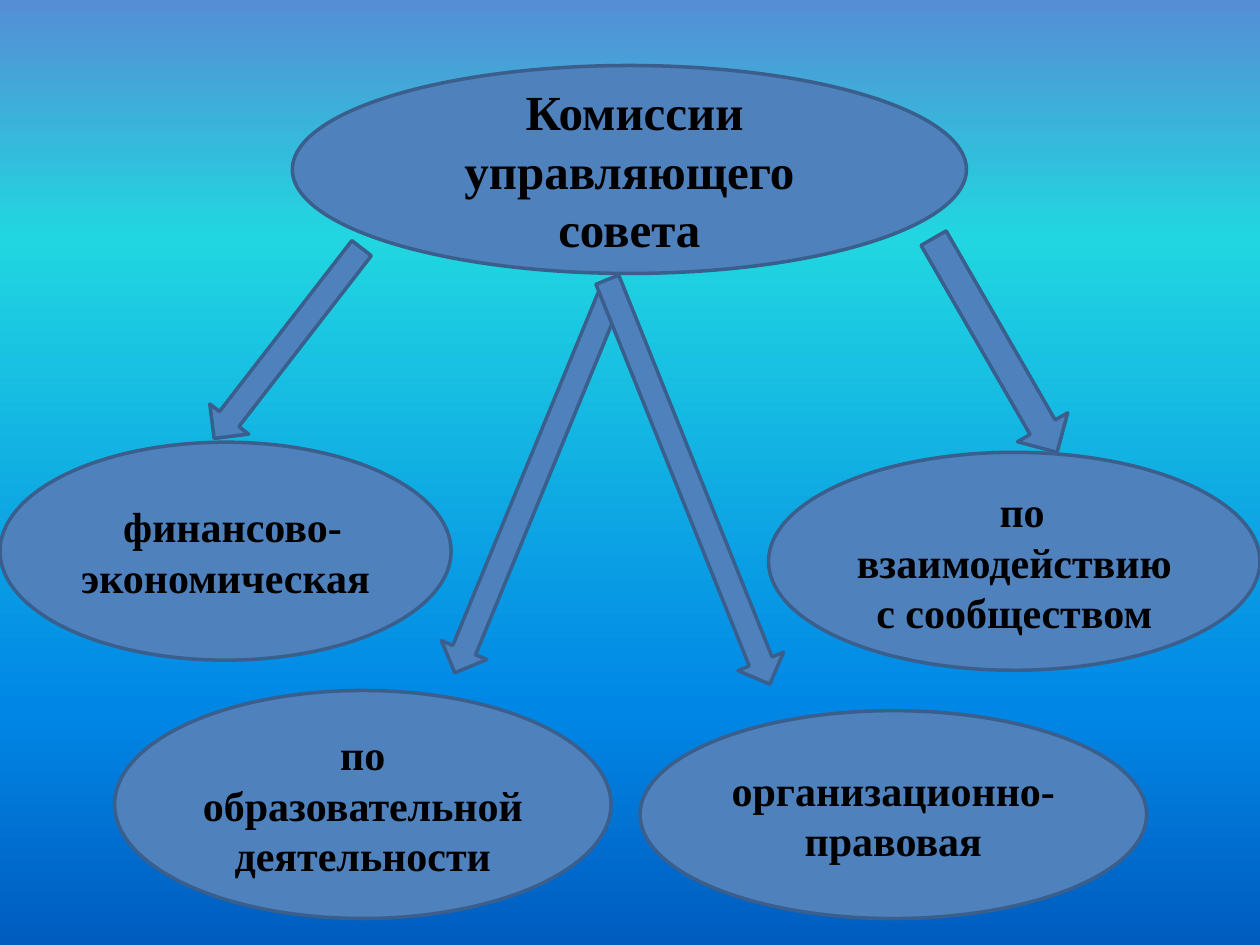
from copy import deepcopy
from dataclasses import dataclass
from math import atan2, degrees, hypot

from pptx import Presentation
from pptx.dml.color import RGBColor
from pptx.enum.shapes import MSO_SHAPE
from pptx.enum.text import MSO_ANCHOR, PP_ALIGN
from pptx.util import Inches, Pt

ELLIPSE, LEFT_ARROW = MSO_SHAPE.OVAL, MSO_SHAPE.LEFT_ARROW
MIDDLE, CENTER = MSO_ANCHOR.MIDDLE, PP_ALIGN.CENTER
CELL = 0.1  # grid cell, inches
COLUMNS, ROWS = 100, 75


@dataclass(frozen=True)
class Theme:
    font: str = "Times New Roman"
    text: str = "000000"
    fill: str = "4F81BD"
    line: str = "3A5F8C"
    line_width: float = 2
    title_size: int = 28
    commission_size: int = 24
    sky: tuple = ((0, "558ED5"), (0.25, "21D6E0"), (0.75, "0087E6"), (1, "005CBF"))


@dataclass(frozen=True)
class Box:
    left: float
    top: float
    width: float
    height: float

    def inner(self, left, top, width, height):
        return Box(self.left + left, self.top + top, width, height)


THEME = Theme()

# text, first-line indent in points, place in the grid
TITLE = ("Комиссии управляющего совета", 6, (23.2, 5.2, 53.5, 16.5))
COMMISSIONS = [
    ("финансово-экономическая", 8, (0, 35.1, 35.8, 17.3)),
    ("по образовательной деятельности", 0, (9.1, 54.8, 39.4, 18.1)),
    ("организационно-правовая", 0, (50.8, 56.4, 40.2, 16.5)),
    ("по взаимодействию с сообществом", 9, (61, 35.9, 39, 17.3)),
]
# tail, tip, thickness
ARROWS = [
    ((74.1, 18.9), (83.9, 35.9), 4.6),
    ((28.7, 19.7), (17, 34.8), 3.9),
    ((48.5, 23.3), (36.1, 53.4), 3.9),
    ((48.2, 22.2), (61.1, 54.3), 3.9),
]


def color(value):
    return RGBColor.from_string(value)


def paint_background(page):
    fill = page.background.fill
    fill.gradient()
    fill.gradient_angle = 270
    stop_list = page.element.find(".//{*}gsLst")
    for _ in THEME.sky[2:]:
        stop_list.append(deepcopy(stop_list[0]))
    for stop, (position, value) in zip(fill.gradient_stops, THEME.sky):
        stop.color.rgb = color(value)
        stop.position = position


def add_solid(page, kind, box):
    lengths = (box.left, box.top, box.width, box.height)
    shape = page.shapes.add_shape(kind, *(Inches(n * CELL) for n in lengths))
    shape.shadow.inherit = False
    shape.fill.solid()
    shape.fill.fore_color.rgb = color(THEME.fill)
    shape.line.color.rgb = color(THEME.line)
    shape.line.width = Pt(THEME.line_width)
    return shape


def add_bubble(page, box, text, indent, size):
    frame = add_solid(page, ELLIPSE, box).text_frame
    frame.word_wrap = True
    frame.vertical_anchor = MIDDLE
    frame.text = text
    para = frame.paragraphs[0]
    para.alignment = CENTER
    if indent:
        properties = para._p.get_or_add_pPr()
        properties.set("marL", "0")
        properties.set("indent", str(Pt(indent)))
    font = para.runs[0].font
    font.name, font.size, font.bold = THEME.font, Pt(size), True
    font.color.rgb = color(THEME.text)


def add_arrow(page, box, tail, tip, thickness):
    across, down = tail[0] - tip[0], tail[1] - tip[1]
    length = hypot(across, down)
    left = (tail[0] + tip[0] - length) / 2
    top = (tail[1] + tip[1] - thickness) / 2
    arrow = add_solid(page, LEFT_ARROW, box.inner(left, top, length, thickness))
    arrow.rotation = degrees(atan2(down, across)) % 360


def add_commission_tree(page, box):
    # Governing council heading
    text, indent, place = TITLE
    add_bubble(page, box.inner(*place), text, indent, THEME.title_size)
    # Arrows to the commissions
    for tail, tip, thickness in ARROWS:
        add_arrow(page, box, tail, tip, thickness)
    # Commissions
    for text, indent, place in COMMISSIONS:
        add_bubble(page, box.inner(*place), text, indent, THEME.commission_size)


def main():
    deck = Presentation()
    deck.slide_width = Inches(COLUMNS * CELL)
    deck.slide_height = Inches(ROWS * CELL)
    page = deck.slides.add_slide(deck.slide_layouts[6])
    paint_background(page)
    add_commission_tree(page, Box(0, 0, COLUMNS, ROWS))
    deck.save("out.pptx")


if __name__ == "__main__":
    main()
